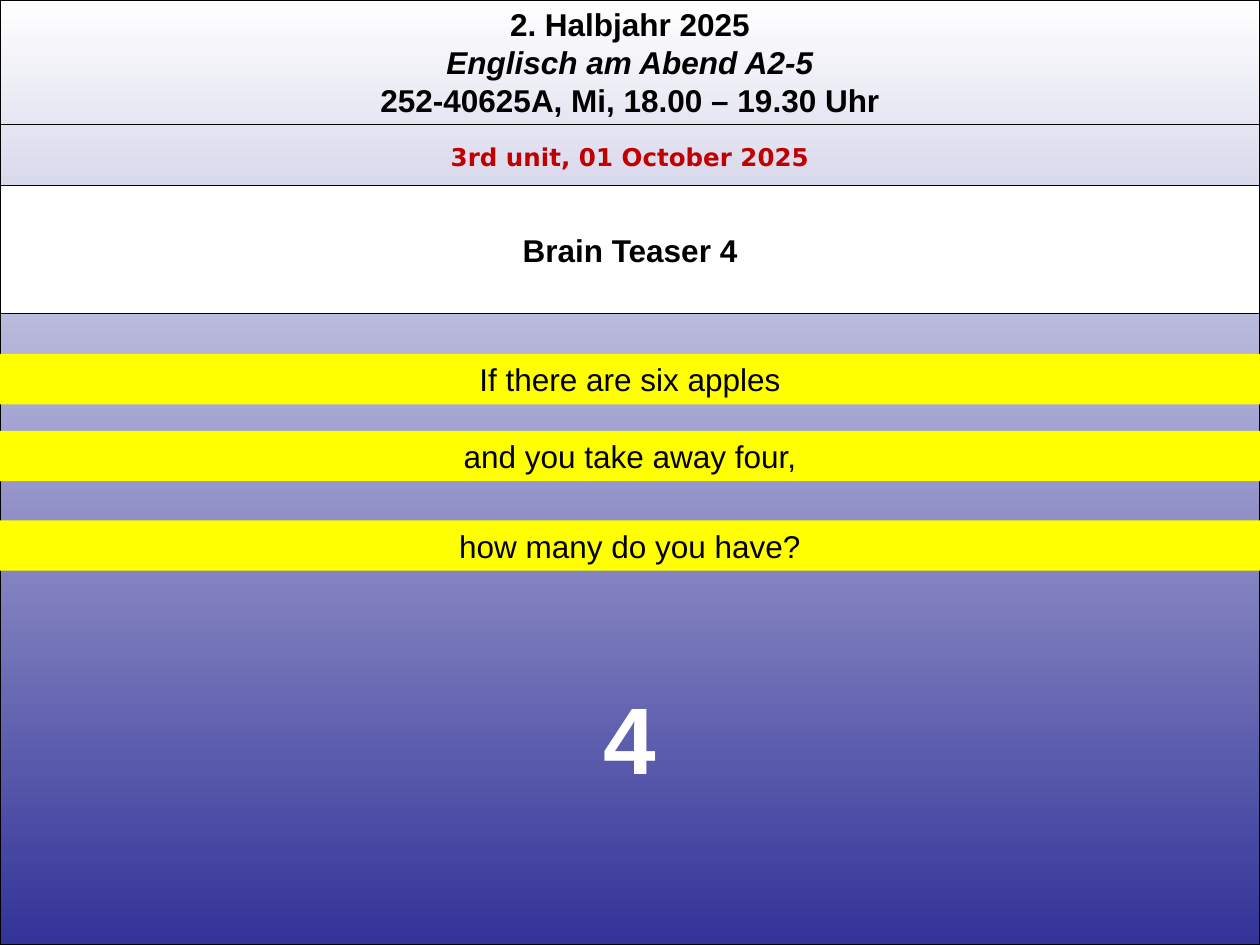
"""Build the Brain Teaser 4 slide of an evening English course."""
from lxml.etree import SubElement
from pptx import Presentation
from pptx.dml.color import RGBColor as RGB
from pptx.enum.shapes import MSO_CONNECTOR as Connector, MSO_SHAPE as Shape
from pptx.enum.text import MSO_ANCHOR as Anchor, PP_ALIGN as Align
from pptx.oxml.ns import qn
from pptx.util import Inches, Pt

COLORS = {
    "black": "000000",
    "white": "FFFFFF",
    "navy": "333399",
    "red": "C00000",
    "yellow": "FFFF00",
}
WIDTH, HEIGHT = 10, 7.5


def color(name):
    return RGB.from_string(COLORS[name])


def write(frame, text, size=18, font="Arial", ink="black", bold=False,
          italic=False, wrap=True):
    frame.word_wrap = wrap
    frame.vertical_anchor = Anchor.MIDDLE
    first = frame.paragraphs[0]
    paragraph = frame.add_paragraph() if first.runs else first
    paragraph.alignment = Align.CENTER
    run = paragraph.add_run()
    run.text = text
    run.font.size = Pt(size)
    run.font.name = font
    run.font.bold = bold
    run.font.italic = italic
    run.font.color.rgb = color(ink)


class TeaserSlide:
    def __init__(self, deck):
        self.slide = deck.slides.add_slide(deck.slide_layouts[5])
        self.shapes = self.slide.shapes
        self.edge = Pt(0.75)

    def outline(self, item):
        item.line.color.rgb = color("black")
        item.line.width = self.edge

    def backdrop(self, top_color, bottom_color):
        panel = self.shapes.add_shape(
            Shape.RECTANGLE, 0, 0, Inches(WIDTH), Inches(HEIGHT))
        panel.shadow.inherit = False
        panel.fill.gradient()
        panel.fill.gradient_angle = 270
        for stop, position, name in zip(
                panel.fill.gradient_stops, (0, 1), (top_color, bottom_color)):
            stop.position = position
            stop.color.rgb = color(name)
        self.outline(panel)

    def rule(self, top):
        divider = self.shapes.add_connector(
            Connector.STRAIGHT, 0, Inches(top), Inches(WIDTH), Inches(top))
        self.outline(divider)
        SubElement(divider._element.spPr, qn("a:effectLst"))

    def title(self, text, top, height):
        heading = self.shapes.title
        heading.left, heading.top = 0, Inches(top)
        heading.width, heading.height = Inches(WIDTH), Inches(height)
        heading.fill.solid()
        heading.fill.fore_color.rgb = color("white")
        self.outline(heading)
        write(heading.text_frame, text, bold=True)
        self.shapes._spTree.append(heading._element)

    def label(self, text, top, height, left=0, width=WIDTH, **style):
        box = self.shapes.add_textbox(
            Inches(left), Inches(top), Inches(width), Inches(height))
        write(box.text_frame, text, **style)
        return box.text_frame

    def band(self, text, top, height=0.4):
        strip = self.shapes.add_shape(
            Shape.RECTANGLE, 0, Inches(top), Inches(WIDTH), Inches(height))
        strip.shadow.inherit = False
        strip.fill.solid()
        strip.fill.fore_color.rgb = color("yellow")
        strip.line.fill.background()
        write(strip.text_frame, text)


def main():
    deck = Presentation()
    deck.slide_width, deck.slide_height = Inches(WIDTH), Inches(HEIGHT)
    teaser = TeaserSlide(deck)

    teaser.backdrop("white", "navy")
    course = teaser.label("2. Halbjahr 2025", -0.01, 1, bold=True)
    write(course, "Englisch am Abend A2-5", bold=True, italic=True)
    write(course, "252-40625A, Mi, 18.00 – 19.30 Uhr", bold=True)
    teaser.rule(0.99)
    teaser.title("Brain Teaser 4", 1.47, 1.02)
    teaser.label("3rd unit, 01 October 2025", 1.07, 0.34, size=14,
                 font="DejaVu Sans", ink="red", bold=True)

    riddle = {
        2.81: "If there are six apples",
        3.42: "and you take away four,",
        4.13: "how many do you have?",
    }
    for top, line in riddle.items():
        teaser.band(line, top)

    teaser.label("4", 5.34, 1.01, left=4.69, width=0.62, size=54,
                 ink="white", bold=True, wrap=False)
    deck.save("out.pptx")


if __name__ == "__main__":
    main()
